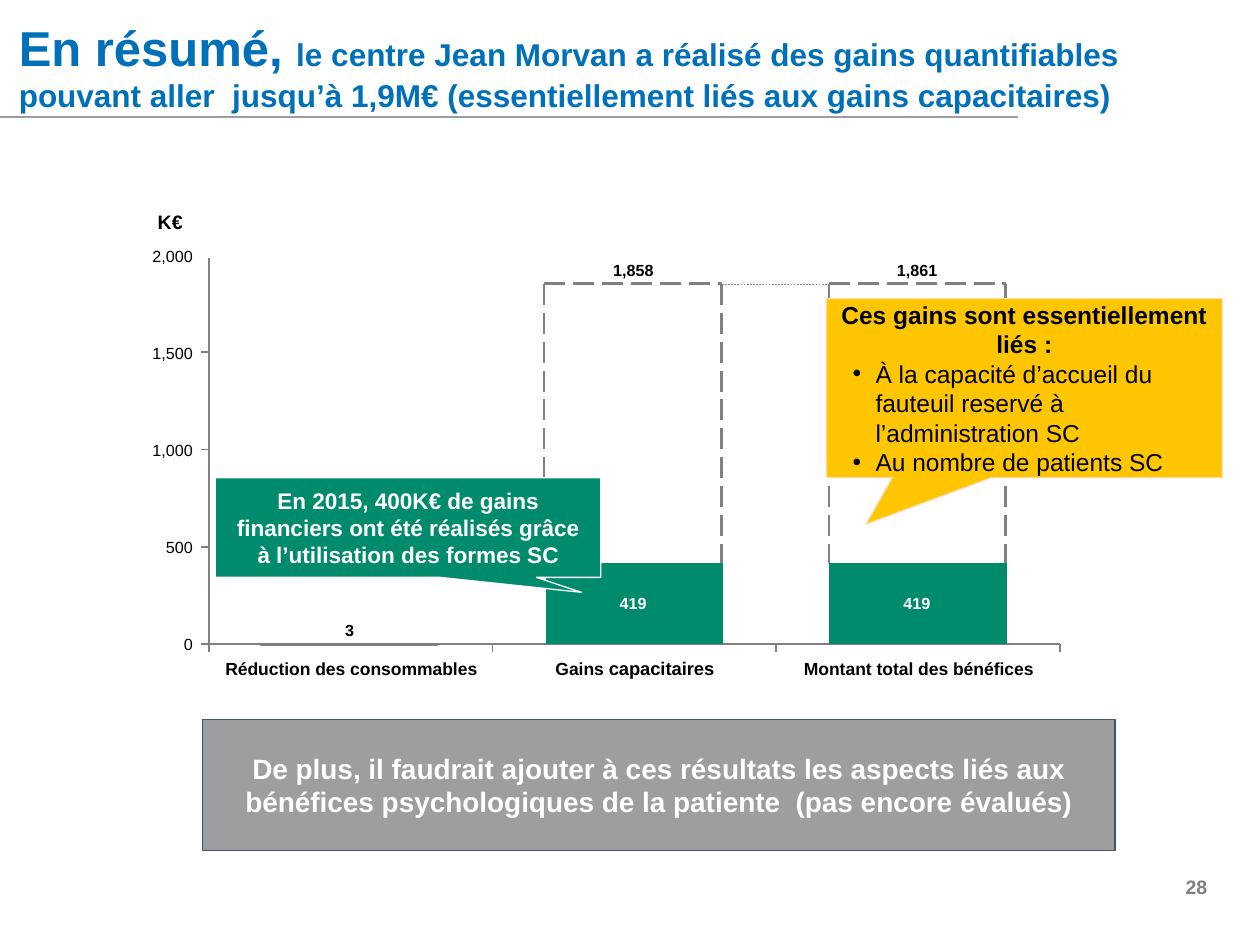
from dataclasses import dataclass
from typing import Optional

from lxml.etree import SubElement
from pptx import Presentation
from pptx.chart.data import CategoryChartData
from pptx.dml.color import RGBColor
from pptx.enum.chart import XL_CHART_TYPE, XL_TICK_LABEL_POSITION, XL_TICK_MARK
from pptx.enum.dml import MSO_LINE
from pptx.enum.shapes import MSO_CONNECTOR, MSO_SHAPE
from pptx.enum.text import MSO_ANCHOR, MSO_AUTO_SIZE, PP_ALIGN
from pptx.oxml import parse_xml
from pptx.oxml.ns import nsdecls, qn
from pptx.util import Cm, Pt

GREY, GREEN, LIME, SILVER = "808080", "008B6C", "06C245", "9C9E9F"
BLACK, WHITE = "000000", "FFFFFF"
LEFT, MID, RIGHT = PP_ALIGN.LEFT, PP_ALIGN.CENTER, PP_ALIGN.RIGHT


@dataclass
class Run:
    text: str
    size: float
    color: str = BLACK
    bold: bool = True


@dataclass
class Label:
    box: tuple
    runs: list
    align: PP_ALIGN = MID
    anchor: MSO_ANCHOR = MSO_ANCHOR.MIDDLE
    wrap: bool = False
    pad: float = 0
    pitch: Optional[float] = None


@dataclass
class Panel:
    kind: MSO_SHAPE
    box: tuple
    fill: str
    edge: str
    runs: list
    tip: tuple = ()
    pad: tuple = (0, 0)


def rgb(code: str) -> RGBColor:
    return RGBColor.from_string(code)


def apply(item, form: dict) -> None:
    for key, value in form.items():
        setattr(item, key, value)


def paint(item, fill: Optional[str], edge: Optional[str] = None, width: float = 0.75) -> None:
    """Fill and outline a shape, a series or a point."""
    if fill:
        item.fill.solid()
        item.fill.fore_color.rgb = rgb(fill)
    else:
        item.fill.background()
    if edge:
        item.line.color.rgb = rgb(edge)
        item.line.width = Pt(width)
    else:
        item.line.fill.background()


def write(para, runs: list, align: PP_ALIGN) -> None:
    para.alignment = align
    for part in runs:
        run = para.add_run()
        run.text = part.text
        apply(run.font, {"name": "Arial", "size": Pt(part.size), "bold": part.bold})
        run.font.color.rgb = rgb(part.color)


def frame(shape, anchor: MSO_ANCHOR, wrap: bool = True, side: float = 0, top: float = 0):
    text = shape.text_frame
    apply(text, {
        "auto_size": MSO_AUTO_SIZE.NONE, "word_wrap": wrap, "vertical_anchor": anchor,
        "margin_left": Cm(side), "margin_right": Cm(side),
        "margin_top": Cm(top), "margin_bottom": Cm(top),
    })
    return text


def add_label(slide, label: Label) -> None:
    shape = slide.shapes.add_textbox(*map(Cm, label.box))
    para = frame(shape, label.anchor, label.wrap, label.pad).paragraphs[0]
    write(para, label.runs, label.align)
    if label.pitch:
        para.line_spacing = Pt(label.pitch)


def add_panel(slide, panel: Panel):
    shape = slide.shapes.add_shape(panel.kind, *map(Cm, panel.box))
    shape.shadow.inherit = False
    paint(shape, panel.fill, panel.edge)
    for i, value in enumerate(panel.tip):
        shape.adjustments[i] = value
    text = frame(shape, MSO_ANCHOR.MIDDLE, True, *panel.pad)
    write(text.paragraphs[0], panel.runs, MID)
    return text


def add_bullet(text, run: Run) -> None:
    para = text.add_paragraph()
    write(para, [run], LEFT)
    para.level = 1
    props = para._p.get_or_add_pPr()
    props.set("marL", str(Cm(0.74)))
    props.set("indent", str(-Cm(0.46)))
    SubElement(props, qn("a:buFont"), typeface="Arial")
    SubElement(props, qn("a:buChar"), char="•")


def add_line(slide, ends: tuple, color: str, width: float, dash=None) -> None:
    line = slide.shapes.add_connector(MSO_CONNECTOR.STRAIGHT, *map(Cm, ends))
    line.line.color.rgb = rgb(color)
    apply(line.line, {"width": Pt(width), "dash_style": dash})
    SubElement(line._element.spPr, qn("a:effectLst"))


def add_bars(slide) -> None:
    data = CategoryChartData()
    data.categories = ["1", "2", "3"]
    rows = [(None, 0, None), (0, 29, 0), (None, 100, 29), (None, None, 100)]
    for i, row in enumerate(rows, 1):
        data.add_series(f"Series {i}", row)
    box = map(Cm, (3.91, 5, 17.58, 8.2))
    chart = slide.shapes.add_chart(XL_CHART_TYPE.COLUMN_STACKED, *box, data).chart
    apply(chart, {"has_legend": False, "has_title": False})
    apply(chart.font, {"name": "Calibri", "size": Pt(12), "bold": True})
    chart.font.color.rgb = rgb(BLACK)
    plot = chart.plots[0]
    apply(plot, {"gap_width": 60, "overlap": 100, "vary_by_categories": False})

    # Only the gains are filled; the other series carry the stack
    for i, series in enumerate(plot.series):
        paint(series.format, "0563C1" if i == 1 else None, GREY if i == 1 else None, 1)
    for s, point, color in [(1, 0, LIME), (1, 1, GREEN), (2, 2, GREEN)]:
        paint(plot.series[s].points[point].format, color)

    for axis in (chart.category_axis, chart.value_axis):
        apply(axis, {
            "tick_label_position": XL_TICK_LABEL_POSITION.NONE, "has_major_gridlines": False,
            "major_tick_mark": XL_TICK_MARK.OUTSIDE, "minor_tick_mark": XL_TICK_MARK.NONE,
        })
        axis.format.line.color.rgb = rgb(GREY)
        axis.format.line.width = Pt(1)
    apply(chart.value_axis, {"minimum_scale": 0, "maximum_scale": 139, "major_unit": 35})

    # Fixed inner plot area
    area = chart._chartSpace.chart.plotArea
    for old in area.findall(qn("c:layout")):
        area.remove(old)
    sizes = {"x": 0.017, "y": 0.024, "w": 0.976, "h": 0.95}
    marks = "".join(f'<c:{k}Mode val="edge"/>' for k in "xy")
    marks += "".join(f'<c:{k} val="{v}"/>' for k, v in sizes.items())
    area.insert(0, parse_xml(
        f'<c:layout {nsdecls("c")}><c:manualLayout><c:layoutTarget val="inner"/>'
        f"{marks}</c:manualLayout></c:layout>"))


def main() -> None:
    deck = Presentation()
    apply(deck, {"slide_width": Cm(25.4), "slide_height": Cm(19.05)})
    slide = deck.slides.add_slide(deck.slide_layouts[5])

    # Title, rule and page number
    title = slide.shapes.title
    apply(title, dict(zip(("left", "top", "width", "height"), map(Cm, (0.38, 0.25, 22.76, 2.16)))))
    write(frame(title, MSO_ANCHOR.MIDDLE).paragraphs[0], [
        Run("En résumé, ", 28, "0071B9"),
        Run("le centre Jean Morvan a réalisé des gains quantifiables pouvant aller  "
            "jusqu’à 1,9M€ (essentiellement liés aux gains capacitaires)", 18, "0071B9"),
    ], LEFT)
    add_line(slide, (0, 2.36, 20.52, 2.36), SILVER, 1)
    add_label(slide, Label((1.12, 17.65, 23.22, 0.46), [Run("28", 11.1, GREY)], RIGHT, MSO_ANCHOR.TOP))

    # Chart with the link between the two totals
    add_line(slide, (14.55, 5.72, 16.71, 5.72), GREY, 0.25, MSO_LINE.DASH)
    add_panel(slide, Panel(MSO_SHAPE.RECTANGLE, (5.26, 12.98, 3.56, 0.03), LIME, GREY, []))
    add_bars(slide)

    # Value scale
    scale = [("0", 0.15), ("500", 0.48), ("1,000", 0.71), ("1,500", 0.71), ("2,000", 0.71)]
    for i, (text, wide) in enumerate(scale):
        box = (3.89 - wide, 12.8 - 1.955 * i, wide, 0.38)
        add_label(slide, Label(box, [Run(text, 9.2, bold=False)], RIGHT))
    add_label(slide, Label((3.18, 4.24, 2.54, 0.46), [Run("K€", 11.1)], LEFT, MSO_ANCHOR.BOTTOM))

    # Dashed outlines of the potential gains
    top, foot = 5.72, 11.35
    for near, far in [(10.97, 14.55), (16.71, 20.27)]:
        for ends in [(near, top, near, foot), (near, top, far, top), (far, top, far, foot)]:
            add_line(slide, ends, GREY, 1.5, MSO_LINE.LONG_DASH)

    # Category names, totals and realised gains
    step = 5.72
    names = [[Run("Réduction des consommables", 10)],
             [Run("Gains ", 10), Run("capacitaires", 10.5)],
             [Run("Montant total des bénéfices", 10)]]
    sums = [("3", 0.33, 12.52), ("1,858", 0.97, 5.26), ("1,861", 0.97, 5.26)]
    for i, (name, (total, wide, y)) in enumerate(zip(names, sums)):
        x = 7.05 + step * i
        add_label(slide, Label((4.22 + step * i, 13.34, step, 0.43), name,
                               anchor=MSO_ANCHOR.TOP, wrap=True, pitch=10.2))
        add_label(slide, Label((x - wide / 2, y, wide, 0.38), [Run(total, 9.2)],
                               anchor=MSO_ANCHOR.BOTTOM, pad=0.08))
        if i:
            add_label(slide, Label((x - 0.36, 11.96, 0.71, 0.38), [Run("419", 9.2, WHITE)], pad=0.08))

    # Callouts and closing message
    note = add_panel(slide, Panel(
        MSO_SHAPE.RECTANGULAR_CALLOUT, (16.66, 6.02, 7.98, 3.61), "FDC600", "FFD9B3",
        [Run("Ces gains sont essentiellement liés :", 14)], (-0.4, 0.76), (0.25, 0.23)))
    for text in ("À la capacité d’accueil du fauteuil reservé à l’administration SC",
                 "Au nombre de patients SC"):
        add_bullet(note, Run(text, 14, bold=False))
    add_panel(slide, Panel(
        MSO_SHAPE.RECTANGULAR_CALLOUT, (4.34, 9.63, 7.77, 2.01), GREEN, WHITE,
        [Run("En 2015, 400K€ de gains financiers ont été réalisés grâce à "
             "l’utilisation des formes SC", 12.9, WHITE)], (0.45, 0.65), (0.25, 0.23)))
    add_panel(slide, Panel(
        MSO_SHAPE.RECTANGLE, (4.09, 14.5, 18.39, 2.64), SILVER, "44546A",
        [Run("De plus, il faudrait ajouter à ces résultats les aspects liés aux bénéfices "
             "psychologiques de la patiente  (pas encore évalués)", 16, WHITE)]))

    deck.save("out.pptx")


if __name__ == "__main__":
    main()
